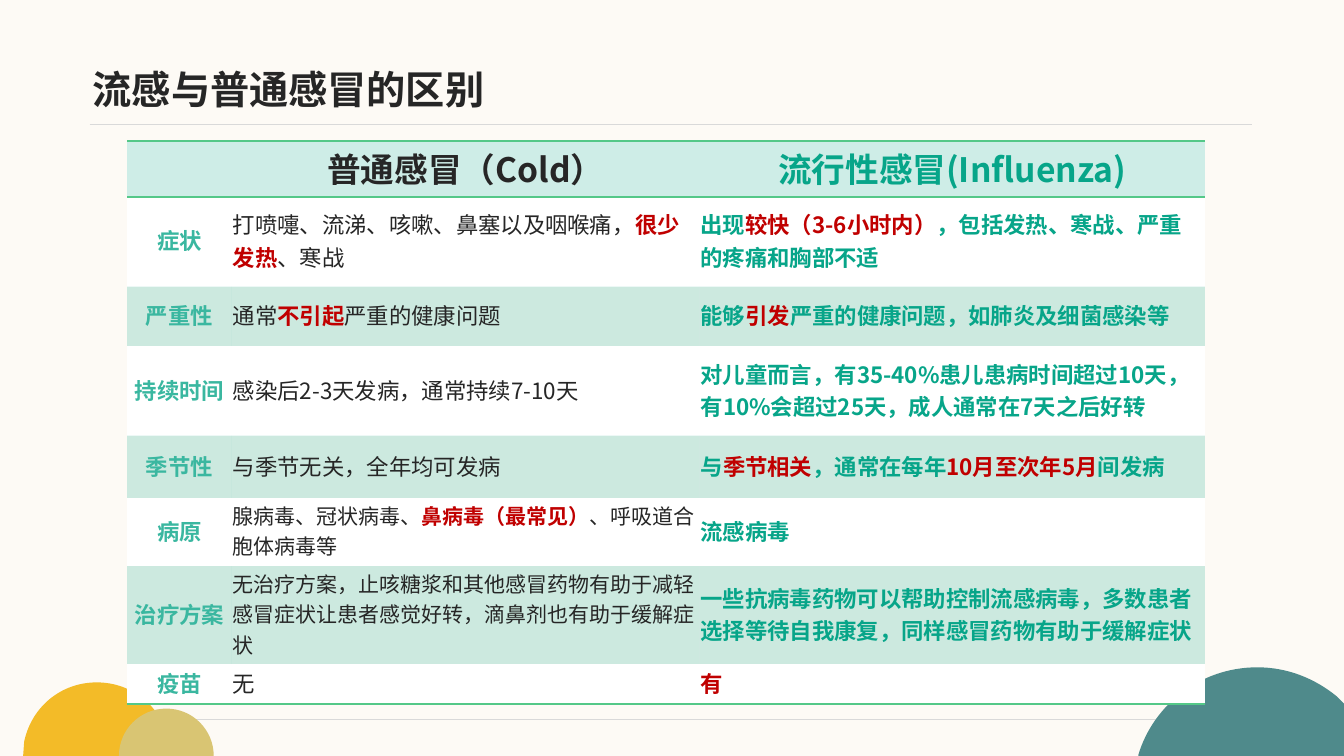
from dataclasses import dataclass

from lxml.etree import SubElement
from pptx import Presentation
from pptx.dml.color import RGBColor
from pptx.enum.shapes import MSO_CONNECTOR
from pptx.enum.text import MSO_ANCHOR, PP_ALIGN
from pptx.oxml import parse_xml
from pptx.oxml.ns import nsdecls, qn
from pptx.util import Inches, Pt


@dataclass(frozen=True)
class Theme:
    paper: str = "FDFAF5"
    rule: str = "D9D9D9"
    ink: str = "262626"
    red: str = "C00000"
    green: str = "07A589"
    mint: str = "3AB7A0"
    header: str = "CEEDE7"
    white: str = "FFFFFF"
    border: str = "54C888"
    yellow: str = "F3BB28"
    khaki: str = "D9C573"
    teal: str = "4F8A8B"
    latin: str = "Arial"
    cjk: str = "Noto Sans CJK SC"
    title: int = 28
    heading: int = 24
    body: int = 16
    small: int = 15


theme = Theme()


def add_runs(p, text, size, color, bold, latin=theme.cjk):
    """Write text into p; parts between asterisks are bold and red."""
    for i, part in enumerate(text.split("*")):
        if not part:
            continue
        r = p.add_run()
        r.text = part
        marked = i % 2 == 1
        fmt = {"size": Pt(size), "bold": bold or marked, "name": latin}
        for name, value in fmt.items():
            setattr(r.font, name, value)
        r.font.color.rgb = RGBColor.from_string(theme.red if marked else color)
        rPr = r._r.get_or_add_rPr()
        rPr.set("lang", "zh-CN")
        SubElement(rPr, qn("a:ea"), typeface=theme.cjk)


def add_curved_shape(start, segments, color):
    """Draw a filled outline; a segment of three points is a Bézier curve."""
    points = [(Inches(x), Inches(y)) for segment in segments for x, y in segment]
    builder = s.shapes.build_freeform(Inches(start[0]), Inches(start[1]))
    builder.add_line_segments(points, close=True)
    sp = builder.convert_to_shape()
    sp.shadow.inherit = False
    sp.fill.solid()
    sp.fill.fore_color.rgb = RGBColor.from_string(color)
    sp.line.fill.background()
    steps = iter(list(sp._element.iter(qn("a:lnTo"))))
    for segment in segments:
        first, *others = [next(steps) for _ in segment]
        if others:
            curve = parse_xml(f'<a:cubicBezTo {nsdecls("a")}/>')
            first.addprevious(curve)
            for step in (first, *others):
                curve.append(step[0])
                step.getparent().remove(step)


prs = Presentation()
prs.slide_width, prs.slide_height = Inches(13.33), Inches(7.5)
s = prs.slides.add_slide(prs.slide_layouts[6])
s.background.fill.solid()
s.background.fill.fore_color.rgb = RGBColor.from_string(theme.paper)

# Thin rules under the title and at the foot
for left, right, y in [(0.89, 12.42, 1.23), (1.69, 11.55, 7.14)]:
    line = s.shapes.add_connector(
        MSO_CONNECTOR.STRAIGHT, Inches(left), Inches(y), Inches(right), Inches(y))
    line.line.color.rgb = RGBColor.from_string(theme.rule)
    line.line.width = Pt(0.5)
    SubElement(line._element.spPr, qn("a:effectLst"))

# Circles cut off by the bottom and right edges of the slide
add_curved_shape((0.96, 6.77), [
    [(1.32, 6.77), (1.61, 7.02), (1.68, 7.36)],
    [(1.69, 7.5)], [(0.23, 7.5)], [(0.24, 7.36)],
    [(0.31, 7.02), (0.6, 6.77), (0.96, 6.77)]], theme.yellow)
add_curved_shape((1.65, 7.03), [
    [(1.39, 7.03), (1.18, 7.24), (1.18, 7.5)],
    [(2.12, 7.5)],
    [(2.12, 7.24), (1.91, 7.03), (1.65, 7.03)]], theme.khaki)
add_curved_shape((12.47, 6.62), [
    [(12.77, 6.62), (13.04, 6.73), (13.26, 6.91)],
    [(13.33, 6.98)], [(13.33, 7.5)], [(11.29, 7.5)], [(11.29, 7.49)],
    [(11.44, 6.99), (11.91, 6.62), (12.47, 6.62)]], theme.teal)

# Comparison table: label, cold, influenza, row height, size of the cold text
ROWS = [
    ("", "普通感冒（Cold）", "流行性感冒(Influenza)", 0.47, theme.heading),
    ("症状", "打喷嚏、流涕、咳嗽、鼻塞以及咽喉痛，*很少发热*、寒战",
     "出现*较快（3-6小时内）*，包括发热、寒战、严重的疼痛和胸部不适", 0.89, theme.body),
    ("严重性", "通常*不引起*严重的健康问题",
     "能够*引发*严重的健康问题，如肺炎及细菌感染等", 0.59, theme.body),
    ("持续时间", "感染后2-3天发病，通常持续7-10天",
     "对儿童而言，有35-40%患儿患病时间超过10天，有10%会超过25天，成人通常在7天之后好转",
     0.89, theme.body),
    ("季节性", "与季节无关，全年均可发病",
     "与*季节相关*，通常在每年*10月至次年5月*间发病", 0.62, theme.body),
    ("病原", "腺病毒、冠状病毒、*鼻病毒（最常见）*、呼吸道合胞体病毒等",
     "流感病毒", 0.62, theme.small),
    ("治疗方案", "无治疗方案，止咳糖浆和其他感冒药物有助于减轻感冒症状让患者感觉好转，"
     "滴鼻剂也有助于缓解症状",
     "一些抗病毒药物可以帮助控制流感病毒，多数患者选择等待自我康复，"
     "同样感冒药物有助于缓解症状", 0.9, theme.small),
    ("疫苗", "无", "*有*", 0.37, theme.body),
]
COLORS = (theme.mint, theme.ink, theme.green)
CELL = {"margin_left": Inches(0.01), "margin_right": Inches(0.01),
        "margin_top": Inches(0.02), "margin_bottom": Inches(0.05),
        "vertical_anchor": MSO_ANCHOR.MIDDLE}
NO_STYLE = "{2D5ABB26-0587-4C30-8999-92F81FD0307C}"

table = s.shapes.add_table(
    len(ROWS), 3, Inches(1.26), Inches(1.4), Inches(10.69), Inches(5.36)).table
table.first_row = table.horz_banding = False
table._tbl.tblPr.find(qn("a:tableStyleId")).text = NO_STYLE
for column, width in zip(table.columns, (1.04, 4.64, 5.01)):
    column.width = Inches(width)

borders = {0: ("lnT", "lnB"), len(ROWS) - 1: ("lnB",)}
for i, (*texts, height, cold_size) in enumerate(ROWS):
    table.rows[i].height = Inches(height)
    banded = i > 0 and i % 2 == 0
    for j, text in enumerate(texts):
        cell = table.cell(i, j)
        for name, value in CELL.items():
            setattr(cell, name, value)
        cell.fill.solid()
        fill = theme.header if i == 0 else theme.mint if banded else theme.white
        cell.fill.fore_color.rgb = RGBColor.from_string(fill)
        tcPr = cell._tc.tcPr
        if banded:
            SubElement(tcPr.find(".//" + qn("a:srgbClr")), qn("a:alpha"), val="25000")
        for k, side in enumerate(borders.get(i, ())):
            tcPr.insert(k, parse_xml(
                f'<a:{side} {nsdecls("a")} w="{Pt(1.5)}"><a:solidFill>'
                f'<a:srgbClr val="{theme.border}"/></a:solidFill></a:{side}>'))
        p = cell.text_frame.paragraphs[0]
        p.alignment = PP_ALIGN.CENTER if i == 0 or j == 0 else PP_ALIGN.LEFT
        size = cold_size if i == 0 or j == 1 else theme.body
        add_runs(p, text, size, COLORS[j], bold=i == 0 or j != 1)

# Title
tf = s.shapes.add_textbox(Inches(0.92), Inches(0.41), Inches(11.5), Inches(0.94)).text_frame
frame = {"margin_left": 0, "margin_right": 0, "margin_top": 0, "margin_bottom": 0,
         "word_wrap": True, "vertical_anchor": MSO_ANCHOR.MIDDLE}
for name, value in frame.items():
    setattr(tf, name, value)
add_runs(tf.paragraphs[0], "流感与普通感冒的区别", theme.title, theme.ink, True, theme.latin)

prs.save("out.pptx")
